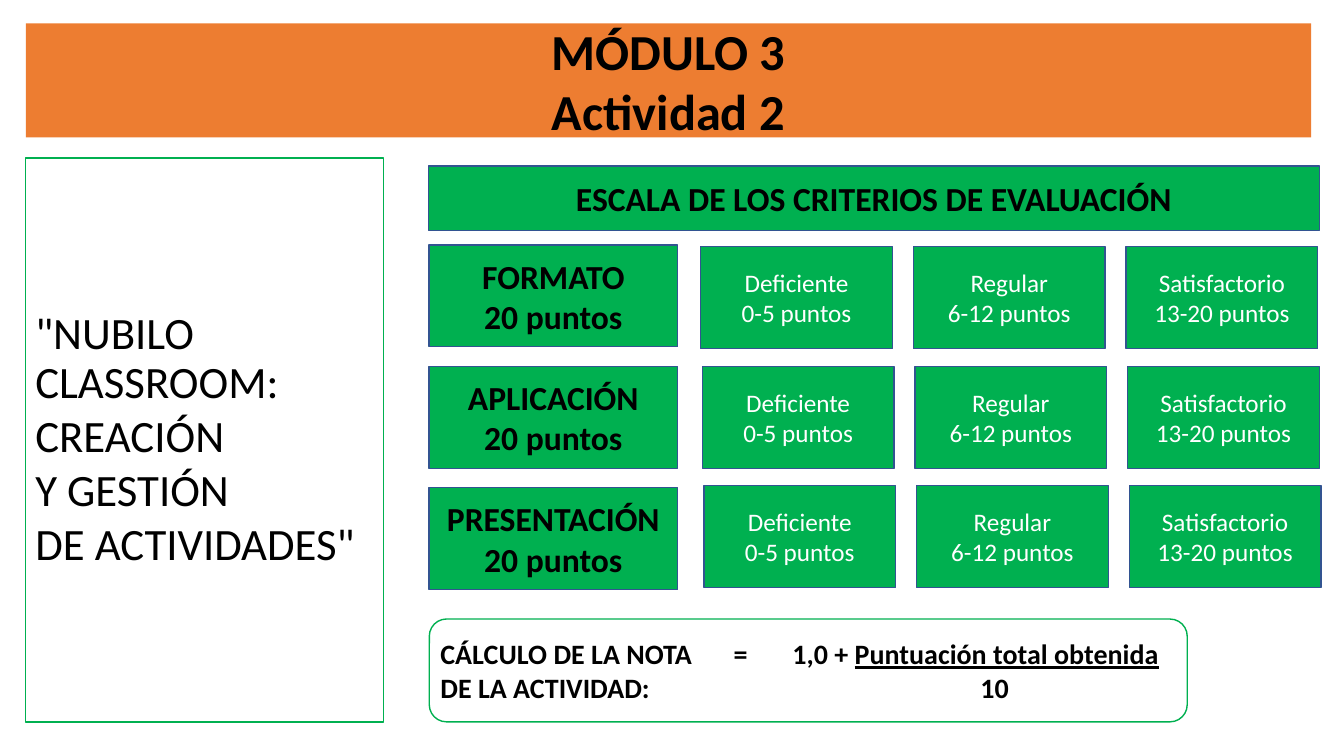
from typing import NamedTuple

from lxml import etree
from pptx import Presentation
from pptx.dml.color import RGBColor
from pptx.enum.shapes import MSO_SHAPE
from pptx.enum.text import MSO_ANCHOR, MSO_AUTO_SIZE, PP_ALIGN
from pptx.oxml.ns import qn
from pptx.util import Cm, Pt

RECT, ROUNDED = MSO_SHAPE.RECTANGLE, MSO_SHAPE.ROUNDED_RECTANGLE
LEFT, CENTER = PP_ALIGN.LEFT, PP_ALIGN.CENTER
TOP, MIDDLE = MSO_ANCHOR.TOP, MSO_ANCHOR.MIDDLE
FIXED = MSO_AUTO_SIZE.NONE

FONT = "Calibri"
ORANGE, GREEN, BLUE = "ED7D31", "00B050", "325491"
BLACK, WHITE = "000000", "FFFFFF"


class Box(NamedTuple):
    """Left, top, width and height in centimetres."""
    left: float
    top: float
    width: float
    height: float

    def lengths(self):
        return [Cm(v) for v in self]


class Level(NamedTuple):
    name: str
    scores: str


CRITERIA = ["FORMATO", "APLICACIÓN", "PRESENTACIÓN"]
LEVELS = [
    Level("Deficiente", "0-5 puntos"),
    Level("Regular", "6-12 puntos"),
    Level("Satisfactorio", "13-20 puntos"),
]


def rgb(color: str) -> RGBColor:
    return RGBColor.from_string(color)


def add_run(p, text: str, *, size: float, color: str = BLACK,
            bold: bool = False, underline: bool = False):
    r = p.add_run()
    r.text = text
    r.font.name, r.font.size = FONT, Pt(size)
    r.font.color.rgb = rgb(color)
    r.font.bold, r.font.underline = bold, underline
    return r


def write(sp, paragraphs: list[str], *, align=CENTER, anchor=MIDDLE, **style):
    """Fill a shape with paragraphs; a newline inside one is a line break."""
    tf = sp.text_frame
    tf.word_wrap, tf.auto_size, tf.vertical_anchor = True, FIXED, anchor
    for i, text in enumerate(paragraphs):
        p = tf.add_paragraph() if i else tf.paragraphs[0]
        p.alignment = align
        for j, line in enumerate(text.split("\n")):
            if j:
                p.add_line_break()
            add_run(p, line, **style)
    return tf


def add_box(slide, box: Box, *, kind=RECT, fill: str = "", line: str = BLUE):
    sp = slide.shapes.add_shape(kind, *box.lengths())
    sp.shadow.inherit = False
    if fill:
        sp.fill.solid()
        sp.fill.fore_color.rgb = rgb(fill)
    else:
        sp.fill.background()
    sp.line.color.rgb = rgb(line)
    sp.line.width = Pt(1)
    return sp


def add_title(slide):
    sp = slide.shapes.title
    sp.left, sp.top, sp.width, sp.height = Box(0.65, 0.59, 32.39, 2.87).lengths()
    sp.fill.solid()
    sp.fill.fore_color.rgb = rgb(ORANGE)
    write(sp, ["MÓDULO 3", "Actividad 2"], size=36, bold=True)


def add_topic(slide):
    sp = add_box(slide, Box(0.64, 3.98, 9.02, 14.22), line=GREEN)
    tf = write(sp, ["\"NUBILO CLASSROOM:", "CREACIÓN\nY GESTIÓN\nDE ACTIVIDADES\""],
               align=LEFT, size=32)
    tf.paragraphs[0].line_spacing = 0.9


def add_scale(slide):
    sp = add_box(slide, Box(10.8, 4.18, 22.45, 1.63), fill=GREEN)
    write(sp, ["ESCALA DE LOS CRITERIOS DE EVALUACIÓN"], size=24, bold=True)
    for row, criterion in enumerate(CRITERIA):
        sp = add_box(slide, Box(10.81, 6.17 + 3.06 * row, 6.27, 2.57), fill=GREEN)
        write(sp, [criterion, "20 puntos"], size=24, bold=True)
        # Each row of levels starts slightly further to the right
        for col, level in enumerate(LEVELS):
            box = Box(17.66 + 5.36 * col + 0.04 * row, 6.22 + 3.01 * row, 4.83, 2.57)
            sp = add_box(slide, box, fill=GREEN)
            write(sp, [level.name, level.scores], size=18, color=WHITE)


def add_formula(slide):
    add_box(slide, Box(10.82, 15.6, 19.1, 2.59), kind=ROUNDED, line=GREEN)
    style = {"size": 20, "bold": True}
    label = slide.shapes.add_textbox(*Box(10.85, 15.92, 7.62, 1.96).lengths())
    write(label, ["CÁLCULO DE LA NOTA DE LA ACTIVIDAD:"],
          align=LEFT, anchor=TOP, **style)

    formula = slide.shapes.add_textbox(*Box(18.24, 15.92, 12.65, 1.96).lengths())
    tf = write(formula, ["=\t1,0 + ", "10"], align=LEFT, anchor=TOP, **style)
    numerator, denominator = tf.paragraphs
    add_run(numerator, "Puntuación total obtenida", underline=True, **style)
    # A tab stop places the sum, and an indent centres the divisor below it
    tabs = etree.SubElement(numerator._p.get_or_add_pPr(), qn("a:tabLst"))
    etree.SubElement(tabs, qn("a:tab"), pos=str(Cm(1.48)), algn="l")
    denominator._p.get_or_add_pPr().set("marL", str(Cm(6.22)))


def main():
    prs = Presentation()
    prs.slide_width, prs.slide_height = Cm(33.87), Cm(19.05)
    slide = prs.slides.add_slide(prs.slide_layouts[5])
    add_title(slide)
    add_topic(slide)
    add_scale(slide)
    add_formula(slide)
    prs.save("out.pptx")


if __name__ == "__main__":
    main()
